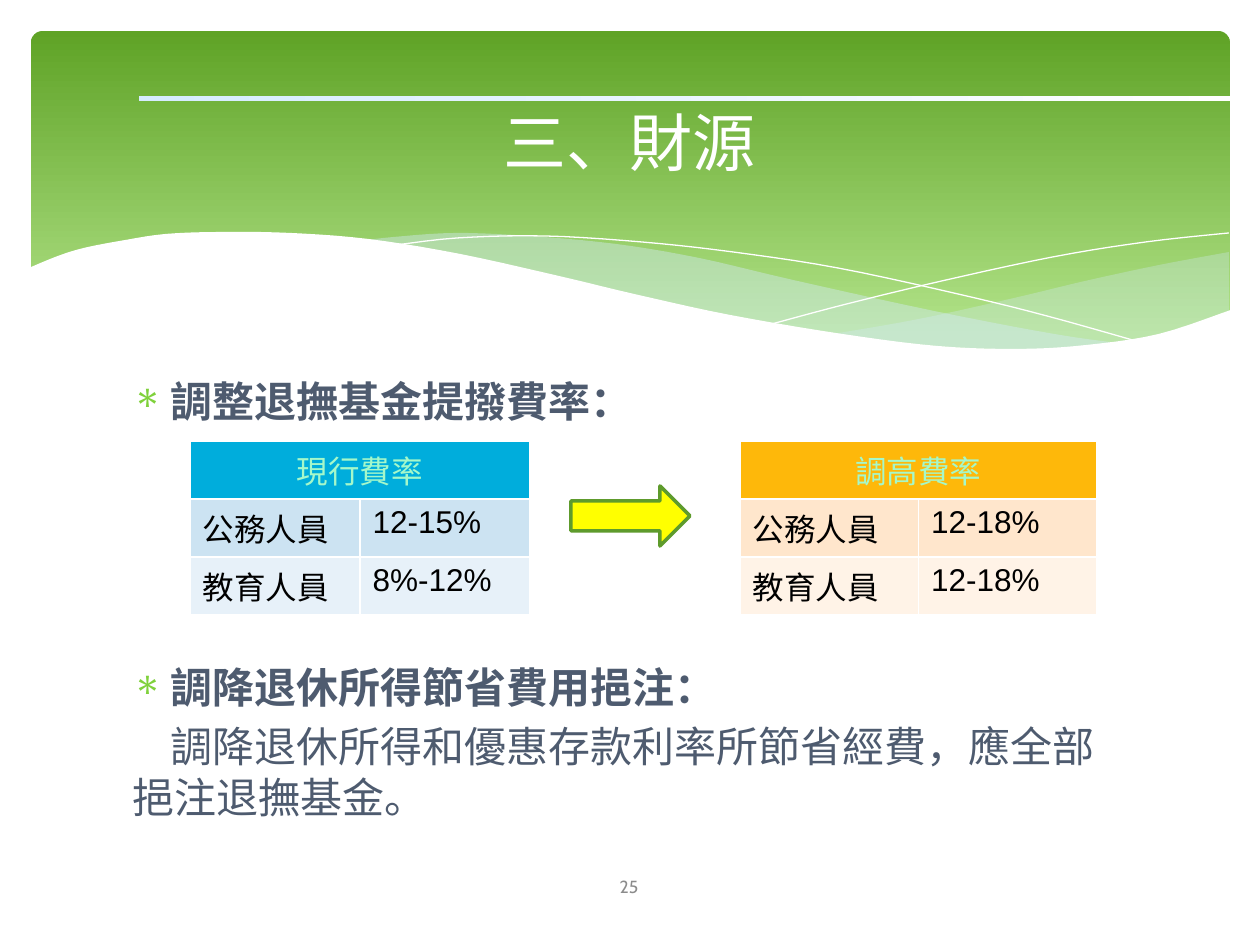
import pptx
import pptx.util
import pptx.dml.color
import pptx.enum.shapes
import pptx.enum.text
import pptx.oxml
import pptx.oxml.ns

PX = 914400 // 126
SHAPES = pptx.enum.shapes.MSO_SHAPE
ALIGN = pptx.enum.text.PP_ALIGN
ANCHOR = pptx.enum.text.MSO_ANCHOR
WHITE, BLACK, MINT, SLATE = "FFFFFF", "000000", "A5F8CA", "4E5B6F"


def color(value):
    return pptx.dml.color.RGBColor.from_string(value)


def add_xml(parent, markup):
    declared = markup.replace(" ", " " + pptx.oxml.ns.nsdecls("a") + " ", 1)
    parent.append(pptx.oxml.parse_xml(declared))


def smooth(knots, steps=5):
    """Points along a Catmull-Rom curve through the knots."""
    padded = [knots[0], *knots, knots[-1]]
    points = [knots[0]]
    for a, b, c, d in zip(padded, padded[1:], padded[2:], padded[3:]):
        for step in range(1, steps + 1):
            t = step / steps
            points.append(tuple(
                (2 * q + (r - p) * t + (2 * p - 5 * q + 4 * r - s) * t**2
                 + (3 * q - p - 3 * r + s) * t**3) / 2
                for p, q, r, s in zip(a, b, c, d)))
    return points


class Painter:
    font = "Cabin"
    number_font = "Arial"

    def __init__(self, page):
        self.page = page
        self.shapes = page.shapes

    def paint(self, shape, fill=None, line=None, width=0, alpha=None):
        shape.shadow.inherit = False
        if fill:
            shape.fill.solid()
            shape.fill.fore_color.rgb = color(fill)
            if alpha:
                tint = shape._element.spPr.find(".//" + pptx.oxml.ns.qn("a:srgbClr"))
                add_xml(tint, f'<a:alpha val="{alpha * 1000}"/>')
        else:
            shape.fill.background()
        if line:
            shape.line.color.rgb = color(line)
            shape.line.width = pptx.util.Pt(width)
        else:
            shape.line.fill.background()

    def preset(self, kind, box, **look):
        shape = self.shapes.add_shape(kind, *(n * PX for n in box))
        self.paint(shape, **look)
        return shape

    def gradient(self, shape, stops, angle):
        shape.fill.gradient()
        shape.fill.gradient_angle = angle
        for stop, (position, value) in zip(shape.fill.gradient_stops, stops):
            stop.position = position
            stop.color.rgb = color(value)

    def outline(self, points, close=True, **look):
        start, *rest = [(round(x * PX), round(y * PX)) for x, y in points]
        builder = self.shapes.build_freeform(*start)
        builder.add_line_segments(rest, close=close)
        self.paint(builder.convert_to_shape(), **look)

    def style(self, para, size, value, bold=False, align=None, name=None):
        para.font.name = name or self.font
        para.font.size = pptx.util.Pt(size)
        para.font.color.rgb = color(value)
        para.font.bold = bold
        para.alignment = align

    def text(self, box, lines, size, value, anchor=ANCHOR.TOP, align=None):
        """Each line is (text, bold, space before in points, bulleted)."""
        frame = self.shapes.add_textbox(*(n * PX for n in box)).text_frame
        frame.word_wrap = True
        frame.vertical_anchor = anchor
        for index, (words, bold, before, bulleted) in enumerate(lines):
            para = frame.add_paragraph() if index else frame.paragraphs[0]
            para.text = words
            self.style(para, size, value, bold, align)
            para.space_before = pptx.util.Pt(before)
            if align is None:
                self.indent(para, bulleted)

    def indent(self, para, bulleted):
        props = para._p.get_or_add_pPr()
        hang = 38 * PX
        props.set("marL", str(hang if bulleted else 0))
        props.set("indent", str(-hang if bulleted else hang))
        if bulleted:
            add_xml(props, '<a:buClr ><a:srgbClr val="7FD13B"/></a:buClr>')
            add_xml(props, '<a:buChar char="∗"/>')

    def table(self, box, rows, fills):
        """The first row holds one heading across both columns."""
        grid = self.shapes.add_table(len(rows), 2, *(n * PX for n in box)).table
        grid.first_row = grid.horz_banding = False
        grid.cell(0, 0).merge(grid.cell(0, 1))
        for r, (row, fill) in enumerate(zip(rows, fills)):
            for c in range(2):
                cell = grid.cell(r, c)
                props = cell._tc.get_or_add_tcPr()
                for side in "LRTB":
                    add_xml(props, f'<a:ln{side} w="12700"><a:solidFill>'
                            f'<a:srgbClr val="{WHITE}"/></a:solidFill></a:ln{side}>')
                cell.fill.solid()
                cell.fill.fore_color.rgb = color(fill)
                if c < len(row):
                    para = cell.text_frame.paragraphs[0]
                    para.text = row[c]
                    self.style(para, 18, BLACK if r else MINT,
                               align=None if r else ALIGN.CENTER,
                               name=self.number_font if c else None)


def main():
    deck = pptx.Presentation()
    deck.slide_width, deck.slide_height = 1260 * PX, 945 * PX
    painter = Painter(deck.slides.add_slide(deck.slide_layouts[6]))

    # Green banner
    banner = painter.preset(SHAPES.ROUNDED_RECTANGLE, (31, 31, 1199, 340))
    banner.adjustments[0] = 0.034
    painter.gradient(banner, [(0, "5FA326"), (0.9, "B2E389")], 270)

    # Translucent veils, each an upper and a lower edge
    right_veil = (
        smooth([(1229, 252), (1159, 265), (1085, 281), (1014, 298), (919, 319), (833, 334)])
        + smooth([(833, 334), (906, 343), (969, 348), (1038, 349), (1110, 345),
                  (1169, 335), (1229, 311)]))
    middle_veil = (
        smooth([(1125, 344), (1054, 334), (934, 311), (793, 280), (699, 258), (616, 244),
                (529, 236), (455, 233), (394, 237), (360, 241)])
        + smooth([(360, 241), (455, 255), (566, 280), (713, 312), (819, 333), (910, 345),
                  (989, 350), (1068, 350), (1125, 344)]))
    painter.outline(right_veil, fill="D6ECFF", alpha=29)
    painter.outline(middle_veil, fill="D6ECFF", alpha=40)

    # Thin white swooshes
    falling = [(389, 246), (457, 238), (545, 236), (642, 242), (733, 252), (838, 268),
               (958, 294), (1047, 316), (1143, 343)]
    rising = [(772, 324), (847, 304), (942, 281), (1053, 257), (1146, 242), (1229, 233)]
    for swoosh in (falling, rising):
        painter.outline(smooth(swoosh), close=False, line=WHITE)

    # White wave that cuts off the banner
    wave = [(1231, 310), (1159, 334), (1087, 345), (1019, 349), (937, 346), (842, 334),
            (730, 315), (634, 294), (563, 277), (460, 254), (368, 239), (290, 233),
            (223, 232), (166, 234), (120, 241), (84, 248), (58, 256), (29, 268)]
    painter.outline(smooth(wave) + [(29, 415), (1231, 415)], fill=WHITE)

    # Rule above the title
    rule = painter.preset(SHAPES.RECTANGLE, (139, 96, 1105, 5))
    painter.gradient(rule, [(0, "D6ECFF"), (1, WHITE)], 0)

    # Body and title
    painter.text((120, 369, 1020, 475), [
        ("調整退撫基金提撥費率：", True, 0, True),
        ("調降退休所得節省費用挹注：", True, 135, True),
        ("調降退休所得和優惠存款利率所節省經費，應全部挹注退撫基金。", False, 4.8, False),
    ], 24, SLATE)
    painter.text((63, 55, 1134, 173), [("三、財源", False, 0, False)], 36, WHITE,
                 ANCHOR.MIDDLE, ALIGN.CENTER)

    # Current and raised rates, with the arrow between them
    painter.table((190, 441, 340, 174),
                  [("現行費率",), ("公務人員", "12-15%"), ("教育人員", "8%-12%")],
                  ("00ADDC", "CCE3F2", "E7F1F9"))
    painter.table((740, 441, 357, 174),
                  [("調高費率",), ("公務人員", "12-18%"), ("教育人員", "12-18%")],
                  ("FEB80A", "FFE6CC", "FFF3E7"))
    painter.preset(SHAPES.RIGHT_ARROW, (571, 486, 119, 60),
                   fill="FFFF00", line="5E9B2C", width=2)

    # Page number
    painter.text((549, 862, 160, 50), [("25", False, 0, False)], 10, "8C8C8C",
                 ANCHOR.MIDDLE, ALIGN.CENTER)

    deck.save("out.pptx")


if __name__ == "__main__":
    main()
